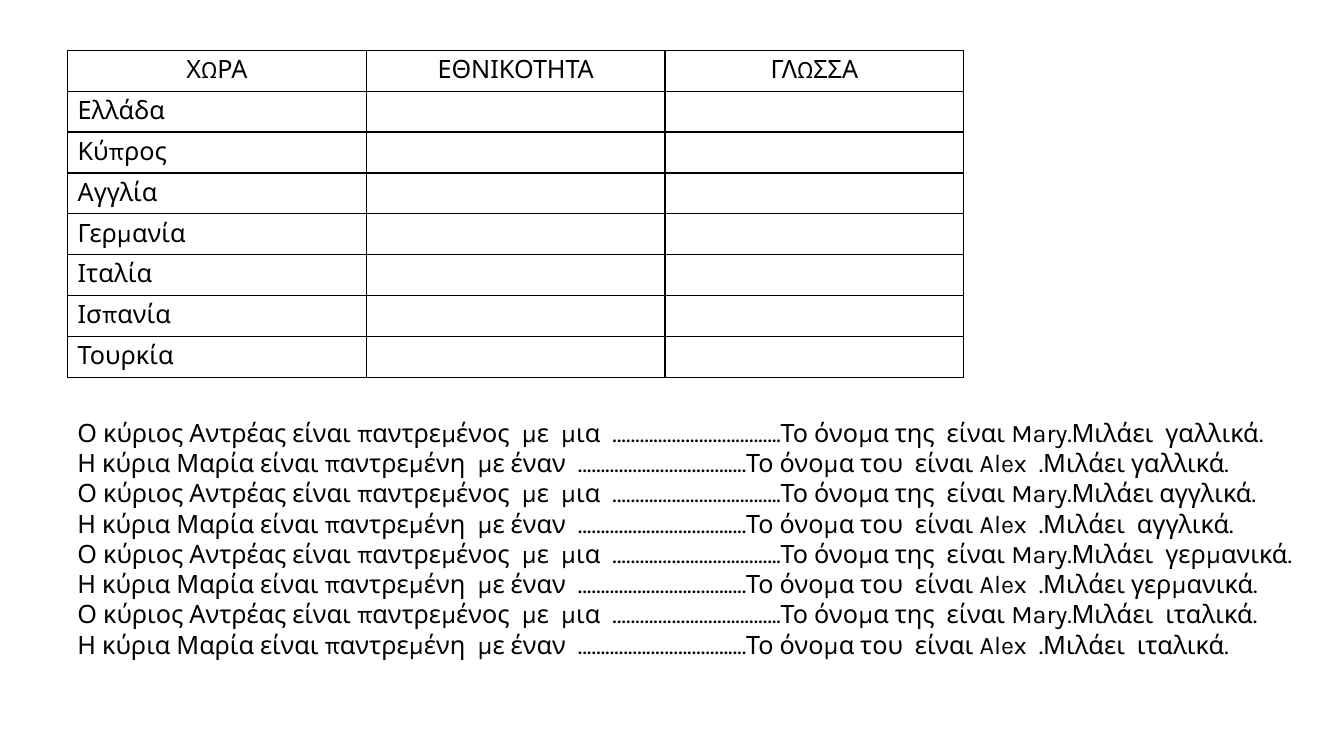
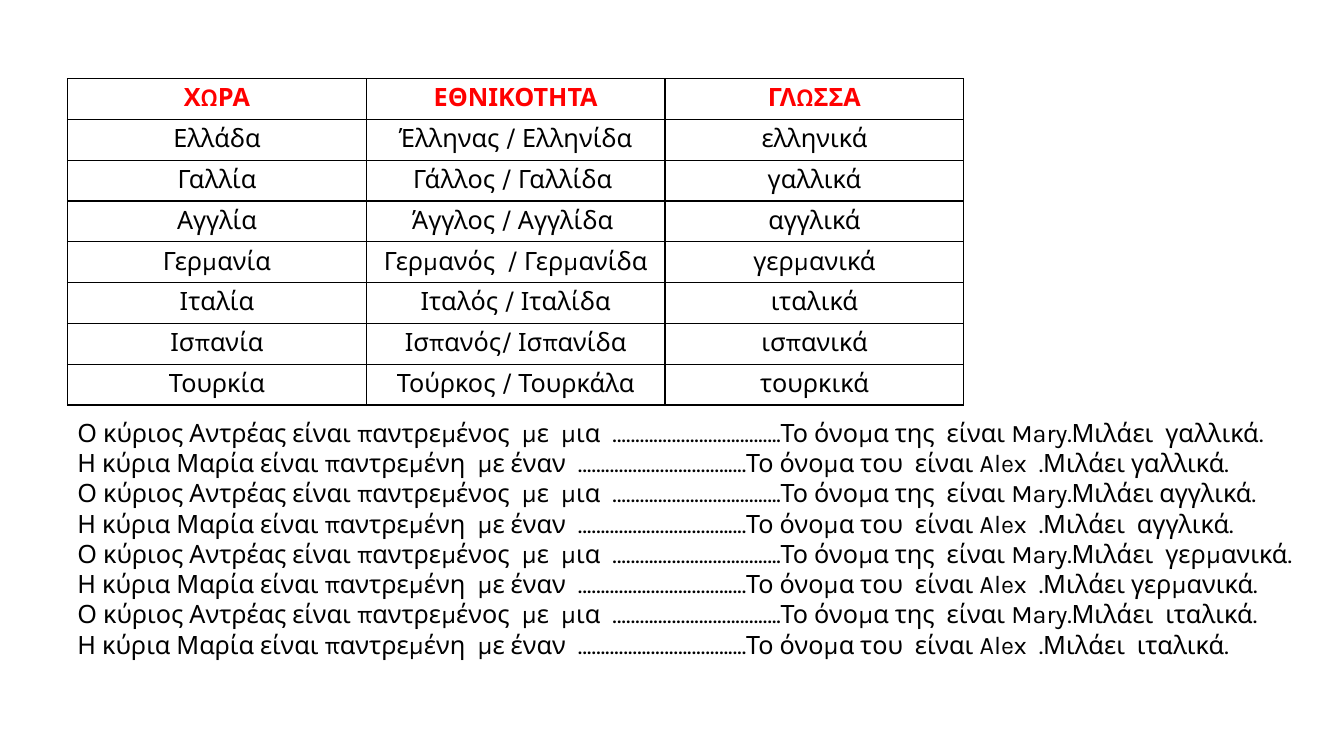
from lxml.etree import SubElement
from pptx import Presentation
from pptx.dml.color import RGBColor
from pptx.enum.text import MSO_AUTO_SIZE, PP_ALIGN
from pptx.oxml.ns import qn
from pptx.util import Inches, Pt

COLOURS = {"text": "000000", "accent": "FF0000", "border": "000000", "background": "FFFFFF"}
HEADINGS = ["ΧΩΡΑ", "ΕΘΝΙΚΟΤΗΤΑ", "ΓΛΩΣΣΑ"]
COUNTRIES = ["Ελλάδα", "Κύπρος", "Αγγλία", "Γερμανία", "Ιταλία", "Ισπανία", "Τουρκία"]
ANSWERS = [
    ["Ελλάδα", "Έλληνας / Ελληνίδα", "ελληνικά"],
    ["Γαλλία", "Γάλλος / Γαλλίδα ", "γαλλικά"],
    ["Αγγλία", "Άγγλος / Αγγλίδα ", "αγγλικά"],
    ["Γερμανία", "Γερμανός  / Γερμανίδα", "γερμανικά"],
    ["Ιταλία", "Ιταλός / Ιταλίδα", "ιταλικά"],
    ["Ισπανία", "Ισπανός/ Ισπανίδα", "ισπανικά"],
    ["Τουρκία", "Τούρκος / Τουρκάλα", "τουρκικά"],
]
HUSBAND = "Ο κύριος Αντρέας είναι παντρεμένος  με  μια  ……………………………….Το όνομα της  είναι Mary.Μιλάει"
WIFE = "Η κύρια Μαρία είναι παντρεμένη  με έναν  ……………………………….Το όνομα του  είναι Alex  .Μιλάει"
LANGUAGE_PAIRS = [
    ("  γαλλικά.", " γαλλικά."),
    (" αγγλικά.", "  αγγλικά."),
    ("  γερμανικά.", " γερμανικά."),
    ("  ιταλικά.", "  ιταλικά."),
]
SENTENCES = [
    opening + language
    for pair in LANGUAGE_PAIRS
    for opening, language in zip((HUSBAND, WIFE), pair)
]


def write_text(paragraph, text, colour="text", bold=False, align=PP_ALIGN.LEFT):
    paragraph.alignment = align
    run = paragraph.add_run()
    run.text = text
    run.font.name = "Karla"
    run.font.size = Pt(18)
    run.font.bold = bold
    run.font.color.rgb = RGBColor.from_string(COLOURS[colour])


class Worksheet:
    left = 0.67

    def __init__(self):
        self.presentation = Presentation()
        self.presentation.slide_width = Inches(13.33)
        self.presentation.slide_height = Inches(7.5)
        self.slide = None

    def add_slide(self):
        self.slide = self.presentation.slides.add_slide(self.presentation.slide_layouts[6])
        fill = self.slide.background.fill
        fill.solid()
        fill.fore_color.rgb = RGBColor.from_string(COLOURS["background"])

    def add_borders(self, cell):
        properties = cell._tc.get_or_add_tcPr()
        for side in ("lnL", "lnR", "lnT", "lnB"):
            line = SubElement(properties, qn(f"a:{side}"), w=str(Pt(1)))
            fill = SubElement(line, qn("a:solidFill"))
            SubElement(fill, qn("a:srgbClr"), val=COLOURS["border"])

    def add_table(self, top, rows, body_align, heading_colour="text", heading_bold=False):
        width, height = Inches(8.89), Inches(3.24)
        table = self.slide.shapes.add_table(
            len(rows) + 1, len(HEADINGS), Inches(self.left), Inches(top), width, height
        ).table
        table.first_row = False
        table.horz_banding = False
        for row_index, row in enumerate([HEADINGS] + rows):
            is_heading = row_index == 0
            for column_index, text in enumerate(row):
                cell = table.cell(row_index, column_index)
                self.add_borders(cell)
                cell.fill.background()
                if text:
                    write_text(
                        cell.text_frame.paragraphs[0],
                        text,
                        colour=heading_colour if is_heading else "text",
                        bold=heading_bold and is_heading,
                        align=PP_ALIGN.CENTER if is_heading else body_align,
                    )

    def add_sentences(self, sentences):
        shape = self.slide.shapes.add_textbox(
            Inches(self.left), Inches(4.09), Inches(12.35), Inches(2.52)
        )
        frame = shape.text_frame
        frame.word_wrap = True
        frame.auto_size = MSO_AUTO_SIZE.SHAPE_TO_FIT_TEXT
        for index, sentence in enumerate(sentences):
            paragraph = frame.add_paragraph() if index else frame.paragraphs[0]
            write_text(paragraph, sentence)


def main():
    worksheet = Worksheet()

    worksheet.add_slide()
    worksheet.add_table(0.5, [[country, "", ""] for country in COUNTRIES], PP_ALIGN.LEFT)
    worksheet.add_sentences(SENTENCES)

    worksheet.add_slide()
    worksheet.add_table(0.78, ANSWERS, PP_ALIGN.CENTER, heading_colour="accent", heading_bold=True)
    worksheet.add_sentences(SENTENCES)

    worksheet.presentation.save("out.pptx")


if __name__ == "__main__":
    main()
